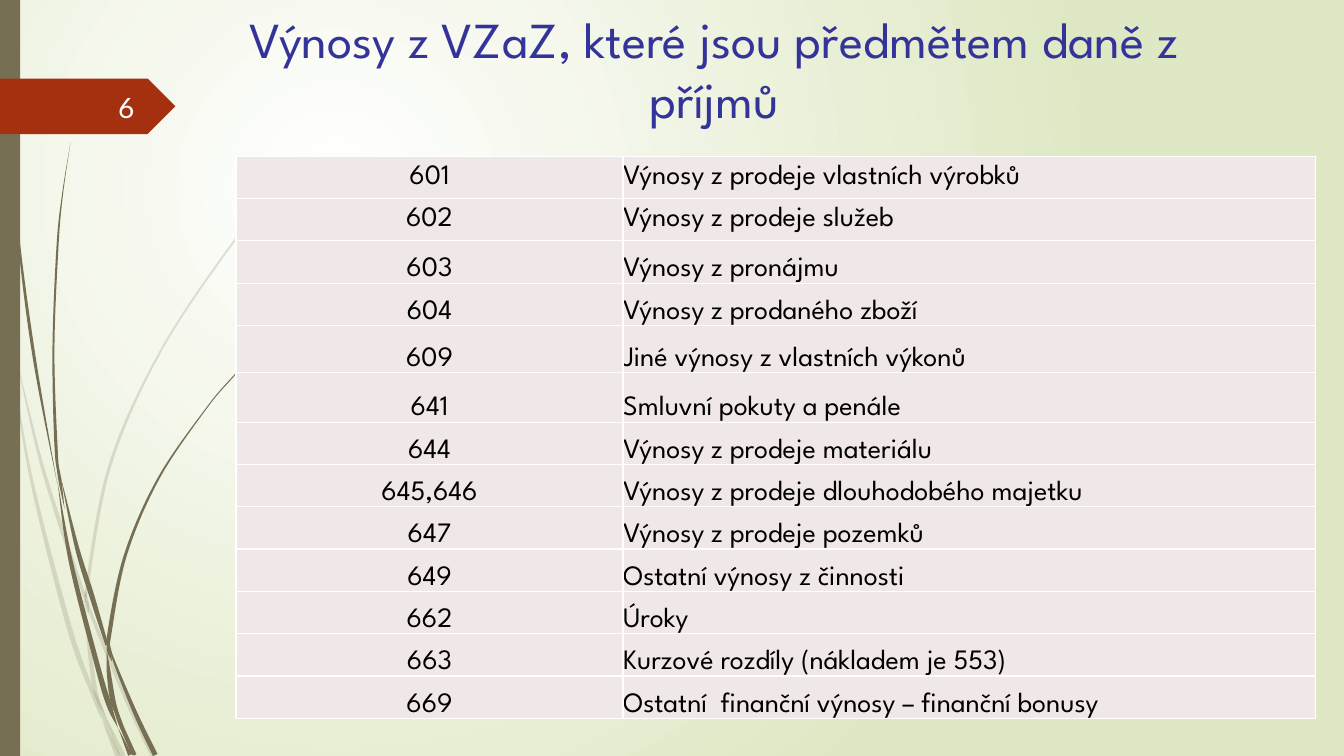
from math import hypot
from lxml.etree import SubElement as Sub
from pptx import Presentation
from pptx.dml.color import RGBColor as RGB
from pptx.enum.shapes import MSO_SHAPE as Kind
from pptx.enum.text import MSO_ANCHOR as Anchor, PP_ALIGN as Align
from pptx.oxml.ns import qn
from pptx.util import Pt

PX = 9144
W, H = 1333, 750
HEX = {"olive": "766F54", "red": "A53010", "blue": "333399", "cell": "F0E8E7",
       "white": "FFFFFF", "black": "000000", "green": "DFE8C4"}
FONT = "League Spartan"
TITLE = "Výnosy z VZaZ, které jsou předmětem daně z příjmů"
NUM = "6"
ROWS = [
    ("601", "Výnosy z prodeje vlastních výrobků"),
    ("602", "Výnosy z prodeje služeb"),
    ("603", "Výnosy z pronájmu"),
    ("604", "Výnosy z prodaného zboží"),
    ("609", "Jiné výnosy z vlastních výkonů"),
    ("641", "Smluvní pokuty a penále"),
    ("644", "Výnosy z prodeje materiálu"),
    ("645,646", "Výnosy z prodeje dlouhodobého majetku"),
    ("647", "Výnosy z prodeje pozemků"),
    ("649", "Ostatní výnosy z činnosti"),
    ("662", "Úroky"),
    ("663", "Kurzové rozdíly (nákladem je 553)"),
    ("669", "Ostatní  finanční výnosy – finanční bonusy"),
]
COLS = (384, 687)
ROW_H = 42
TALL = {"609": 47, "641": 49}
MIDDLE = ("601", "602")
# Each blade lists (x, y, width) along its middle.
PALE = [
    [(0, 282, 0), (3, 305, 3), (11, 350, 0)],
    [(14, 345, 0), (38, 448, 3), (60, 521, 4), (84, 592, 3)],
    [(88, 596, 0), (90, 608, 3), (125, 693, 4), (152, 750, 5)],
    [(105, 711, 0), (122, 750, 5)],
    [(11, 350, 0), (30, 470, 3), (68, 620, 5), (92, 688, 4), (101, 714, 0)],
    [(84, 599, 0), (89, 646, 4), (95, 687, 4), (105, 711, 0)],
    [(312, 153, 0), (268, 198, 1), (228, 245, 2), (159, 349, 2), (109, 462, 3),
     (86, 584, 3), (87, 596, 0)],
    [(101, 714, 0), (117, 750, 5)],
    [(85, 586, 0), (86, 598, 4), (88, 610, 0)],
    [(93, 683, 0), (103, 711, 4), (119, 750, 1)],
]
DARK = [
    [(3, 0, 1), (6, 48, 1), (8, 110, 1), (18, 233, 2), (34, 355, 3), (57, 481, 0)],
    [(60, 472, 0), (76, 542, 4), (91, 591, 5), (106, 640, 3)],
    [(110, 641, 0), (112, 653, 2), (134, 707, 4), (154, 749, 5)],
    [(57, 477, 0), (70, 556, 4), (96, 658, 5), (108, 699, 5), (117, 722, 0)],
    [(70, 141, 0), (62, 193, 1), (57, 245, 2), (53, 349, 2), (56, 451, 3), (60, 472, 0)],
    [(122, 719, 0), (134, 749, 3)],
    [(55, 449, 0), (59, 474, 3), (64, 505, 0)],
    [(260, 344, 0), (231, 374, 1), (204, 406, 1), (157, 475, 2), (124, 552, 3),
     (108, 632, 4), (110, 641, 0)],
    [(117, 722, 0), (129, 749, 4)],
    [(106, 645, 0), (108, 668, 4), (113, 699, 5), (122, 719, 0)],
    [(106, 631, 0), (108, 645, 4), (111, 656, 0)],
    [(110, 691, 0), (118, 714, 4), (132, 749, 2)],
]


def paint(shape, color):
    shape.shadow.inherit = False
    shape.fill.solid()
    shape.fill.fore_color.rgb = RGB.from_string(HEX[color])
    shape.line.fill.background()


def write(frame, text, size, color, align, font=FONT):
    para = frame.paragraphs[0]
    para.text, para.alignment = text, align
    para.font.size, para.font.name = Pt(size), font
    para.font.color.rgb = RGB.from_string(HEX[color])


def bend(side):
    ends = [side[0], *side, side[-1]]
    for a, b, c, d in zip(ends, ends[1:], ends[2:], ends[3:]):
        yield ([q + (r - p) / 6 for p, q, r in zip(a, b, c)],
               [r - (s - q) / 6 for q, r, s in zip(b, c, d)], c)


def blade(shapes, knots, alpha):
    left, right = [], []
    for i, (x, y, wide) in enumerate(knots):
        a, b = knots[max(i - 1, 0)], knots[min(i + 1, len(knots) - 1)]
        dx, dy = b[0] - a[0], b[1] - a[1]
        half = wide / 2 / hypot(dx, dy)
        for side, sign in ((left, -1), (right, 1)):
            side.append((max(x + sign * dy * half, 0) * PX, (y - sign * dx * half) * PX))
    right.reverse()
    edge = left + right
    form = shapes.build_freeform(*edge[0], scale=1.0)
    form.add_line_segments(edge[1:], close=True)
    shape = form.convert_to_shape()
    paint(shape, "olive")
    props = shape._element.spPr
    arcs = [*bend(left), None, *bend(right)]
    for line, arc in zip(list(props.iter(qn("a:lnTo"))), arcs):
        if arc:
            cubic = line.makeelement(qn("a:cubicBezTo"), {})
            for x, y in arc:
                Sub(cubic, qn("a:pt"), x=str(round(x - shape.left)), y=str(round(y - shape.top)))
            line.getparent().replace(line, cubic)
    if alpha < 100:
        Sub(props.find(".//" + qn("a:srgbClr")), qn("a:alpha"), val=str(alpha * 1000))


def box(shapes, x, y, w, h, anchor):
    frame = shapes.add_textbox(x * PX, y * PX, w * PX, h * PX).text_frame
    frame.word_wrap = True
    frame.vertical_anchor = anchor
    return frame


def backdrop(slide):
    fill = slide.background.fill
    fill.gradient()
    for stop, name in zip(fill.gradient_stops, ("white", "green")):
        stop.color.rgb = RGB.from_string(HEX[name])
    grad = slide._element.find(".//" + qn("a:gradFill"))
    grad.remove(grad.find(qn("a:lin")))
    ring = Sub(grad, qn("a:path"), path="circle")
    Sub(ring, qn("a:fillToRect"), l="50000", t="50000", r="100000", b="100000")


def border(cell):
    props = cell._tc.get_or_add_tcPr()
    for i, side in enumerate(("lnL", "lnR", "lnT", "lnB")):
        line = props.makeelement(qn("a:" + side), {"w": str(Pt(1))})
        Sub(Sub(line, qn("a:solidFill")), qn("a:srgbClr"), val=HEX["white"])
        props.insert(i, line)


def grid(shapes):
    highs = [TALL.get(code, ROW_H) for code, _ in ROWS]
    table = shapes.add_table(len(ROWS), len(COLS), 234 * PX, 155 * PX,
                             sum(COLS) * PX, sum(highs) * PX).table
    table.first_row = table.horz_banding = False
    for col, wide in zip(table.columns, COLS):
        col.width = wide * PX
    for row, high, texts in zip(table.rows, highs, ROWS):
        row.height = high * PX
        for cell, text, align in zip(row.cells, texts, (Align.CENTER, Align.LEFT)):
            cell.margin_left = cell.margin_right = cell.margin_top = cell.margin_bottom = 0
            cell.vertical_anchor = Anchor.MIDDLE if texts[0] in MIDDLE else Anchor.BOTTOM
            cell.fill.solid()
            cell.fill.fore_color.rgb = RGB.from_string(HEX["cell"])
            border(cell)
            write(cell.text_frame, text, 20, "black", align)


def main():
    deck = Presentation()
    deck.slide_width, deck.slide_height = W * PX, H * PX
    slide = deck.slides.add_slide(deck.slide_layouts[6])
    shapes = slide.shapes
    backdrop(slide)
    for blades, alpha in ((PALE, 20), (DARK, 100)):
        for knots in blades:
            blade(shapes, knots, alpha)
    paint(shapes.add_shape(Kind.RECTANGLE, 0, 0, 20 * PX, H * PX), "olive")
    paint(shapes.add_shape(Kind.PENTAGON, 0, 78 * PX, 174 * PX, 55 * PX), "red")
    write(box(shapes, 220, 3, 977, 142, Anchor.TOP), TITLE, 36, "blue", Align.CENTER)
    grid(shapes)
    write(box(shapes, 58, 86, 85, 40, Anchor.MIDDLE), NUM, 20, "white", Align.RIGHT, "Lato")
    deck.save("out.pptx")


if __name__ == "__main__":
    main()
